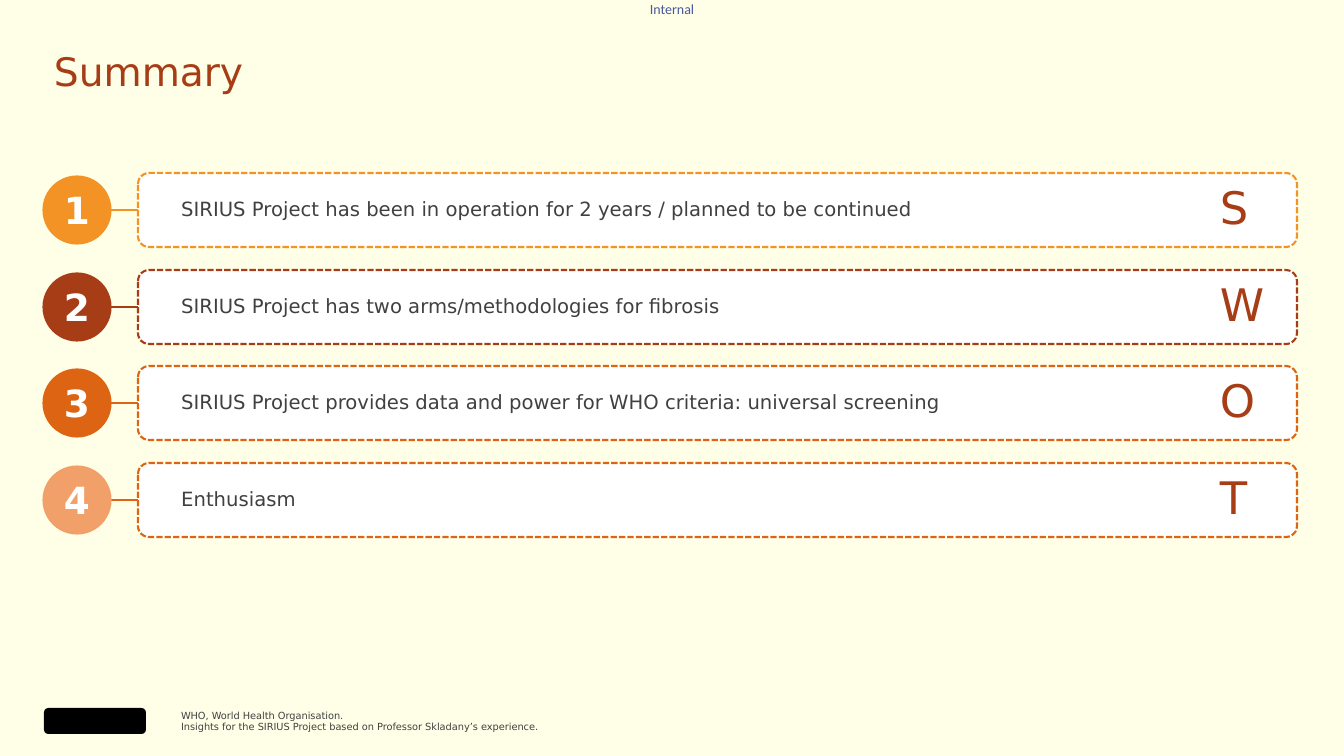
from dataclasses import dataclass

from lxml.etree import SubElement
from pptx import Presentation
from pptx.dml.color import RGBColor
from pptx.enum.dml import MSO_LINE_DASH_STYLE as Dash
from pptx.enum.shapes import MSO_CONNECTOR as Connector
from pptx.enum.shapes import MSO_SHAPE as Shape
from pptx.enum.text import MSO_ANCHOR as Anchor
from pptx.enum.text import PP_ALIGN as Align
from pptx.oxml.ns import qn
from pptx.util import Emu, Pt


@dataclass(frozen=True)
class Theme:
    font: str = "DejaVu Sans"
    label_font: str = "Calibri"
    background: str = "FFFFE7"
    white: str = "FFFFFF"
    black: str = "000000"
    text: str = "404040"
    label: str = "4A569E"
    amber: str = "F39325"
    rust: str = "A63D16"
    orange: str = "DC6413"
    peach: str = "F2A069"
    title_size: float = 28
    letter_size: float = 32
    number_size: float = 26.7
    body_size: float = 14
    label_size: float = 10
    note_size: float = 7
    line_width: float = 1.5
    ring_width: float = 2.25


def px(length):
    return Emu(round(length * 914400 / 100.8))


def rgb(color):
    return RGBColor.from_string(color)


class SlideBuilder:
    def __init__(self, slide, theme):
        self.slide = slide
        self.theme = theme

    def background(self):
        fill = self.slide.background.fill
        fill.solid()
        fill.fore_color.rgb = rgb(self.theme.background)

    def set_text(self, shape, text, size, color, font=None, bold=False,
                 align=Align.LEFT, inset=0, spacing=1.0, wrap=True):
        frame = shape.text_frame
        frame.text = text
        frame.word_wrap = wrap
        frame.vertical_anchor = Anchor.MIDDLE
        frame.margin_left = px(inset)
        frame.margin_right = frame.margin_top = frame.margin_bottom = 0
        for paragraph in frame.paragraphs:
            paragraph.alignment = align
            paragraph.line_spacing = spacing
            for run in paragraph.runs:
                run.font.name = font or self.theme.font
                run.font.size = Pt(size)
                run.font.bold = bold
                run.font.color.rgb = rgb(color)

    def text(self, box, text, size, color, **style):
        shape = self.slide.shapes.add_textbox(*map(px, box))
        self.set_text(shape, text, size, color, **style)

    def shape(self, kind, box, fill, line=None, width=0):
        shape = self.slide.shapes.add_shape(kind, *map(px, box))
        shape.shadow.inherit = False
        shape.fill.solid()
        shape.fill.fore_color.rgb = rgb(fill)
        if line:
            shape.line.color.rgb = rgb(line)
            shape.line.width = Pt(width)
        else:
            shape.line.fill.background()
        return shape

    def card(self, box, text, color):
        theme = self.theme
        shape = self.shape(Shape.ROUNDED_RECTANGLE, box, theme.white, color, theme.line_width)
        shape.adjustments[0] = 0.15
        shape.line.dash_style = Dash.SQUARE_DOT
        self.set_text(shape, text, theme.body_size, theme.text, inset=40, spacing=0.9)

    def badge(self, box, number, color):
        theme = self.theme
        shape = self.shape(Shape.OVAL, box, color, color, theme.ring_width)
        self.set_text(shape, number, theme.number_size, theme.white, bold=True,
                      align=Align.CENTER)

    def link(self, left, right, y, color):
        line = self.slide.shapes.add_connector(
            Connector.STRAIGHT, px(left), px(y), px(right), px(y))
        line.line.color.rgb = rgb(color)
        line.line.width = Pt(self.theme.line_width)
        SubElement(line._element.spPr, qn("a:effectLst"))

    def row(self, top, number, letter, text, badge_color, card_color):
        theme = self.theme
        self.card((138, top, 1159, 74), text, card_color)
        self.link(110, 138, top + 37, card_color)
        self.badge((44, top + 4, 66, 66), number, badge_color)
        self.text((1220, top + 7, 50, 60), letter, theme.letter_size, theme.rust,
                  spacing=0.9, wrap=False)


def main():
    theme = Theme()
    presentation = Presentation()
    presentation.slide_width = px(1344)
    presentation.slide_height = px(756)
    slide = presentation.slides.add_slide(presentation.slide_layouts[6])
    builder = SlideBuilder(slide, theme)

    builder.background()
    builder.shape(Shape.ROUNDED_RECTANGLE, (44, 708, 102, 26), theme.black)
    builder.text((650, 0, 47, 17), "Internal", theme.label_size, theme.label,
                 font=theme.label_font, wrap=False)
    builder.text((54, 42, 1233, 57), "Summary", theme.title_size, theme.rust)
    builder.text((181, 701, 1044, 40),
                 "WHO, World Health Organisation.\n"
                 "Insights for the SIRIUS Project based on Professor Skladany’s experience.",
                 theme.note_size, theme.text)

    rows = [
        ("S", "SIRIUS Project has been in operation for 2 years / planned to be continued",
         theme.amber, theme.amber),
        ("W", "SIRIUS Project has two arms/methodologies for fibrosis",
         theme.rust, theme.rust),
        ("O", "SIRIUS Project provides data and power for WHO criteria: universal screening",
         theme.orange, theme.orange),
        ("T", "Enthusiasm", theme.peach, theme.orange),
    ]
    for index, (letter, text, badge_color, card_color) in enumerate(rows):
        top = 173 + (193 * index + 1) // 2
        builder.row(top, str(index + 1), letter, text, badge_color, card_color)

    presentation.save("out.pptx")


if __name__ == "__main__":
    main()
